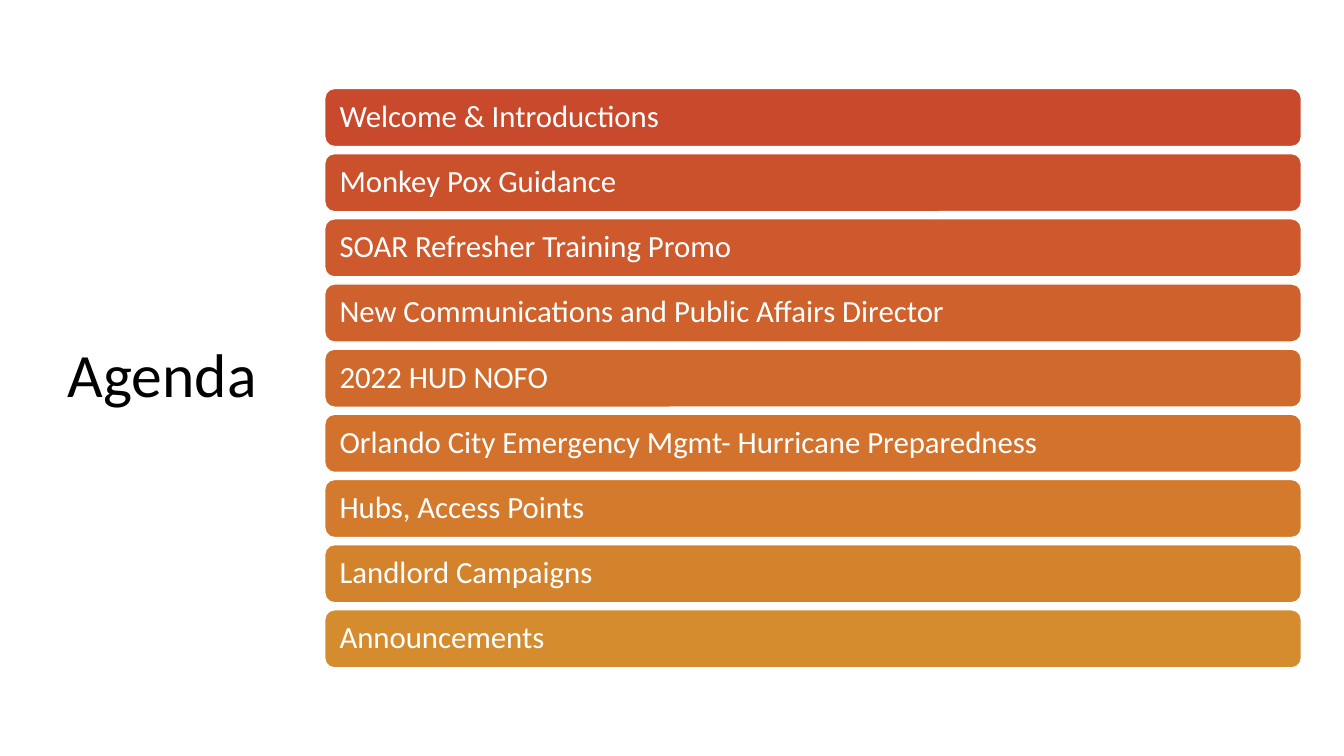
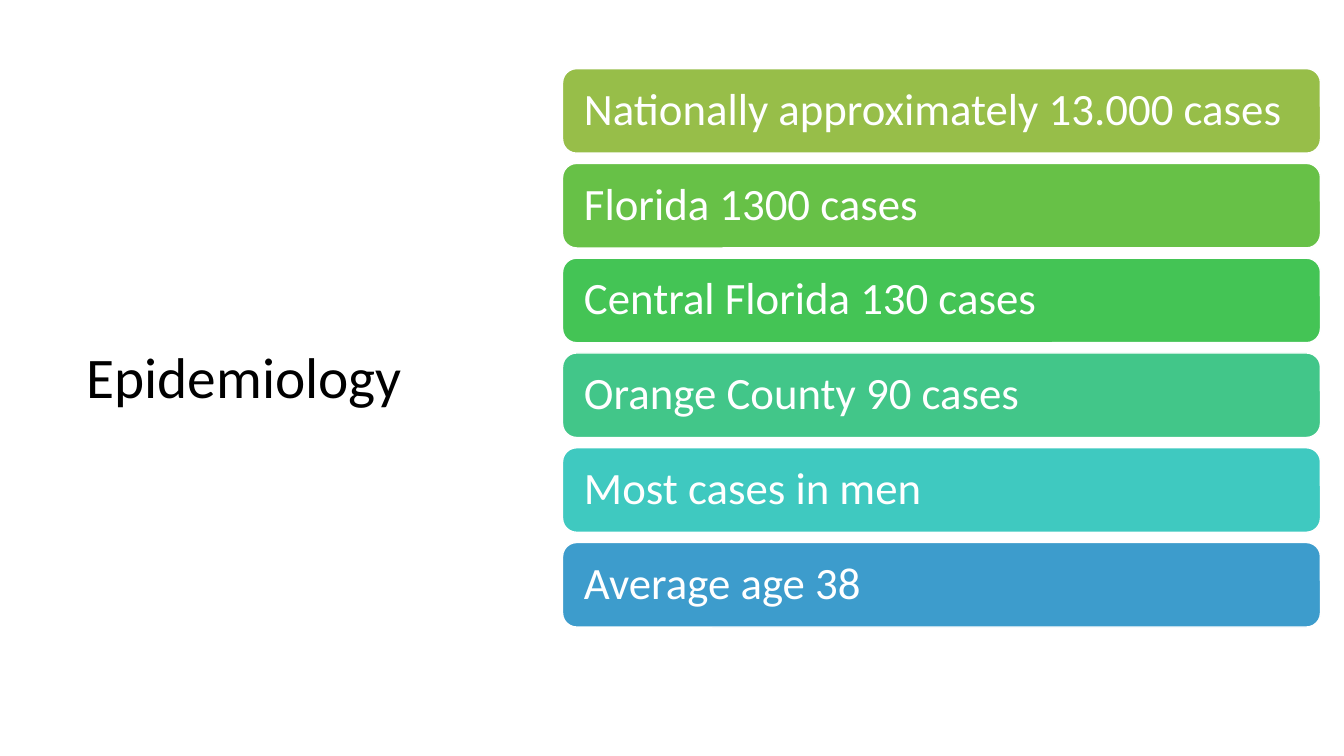
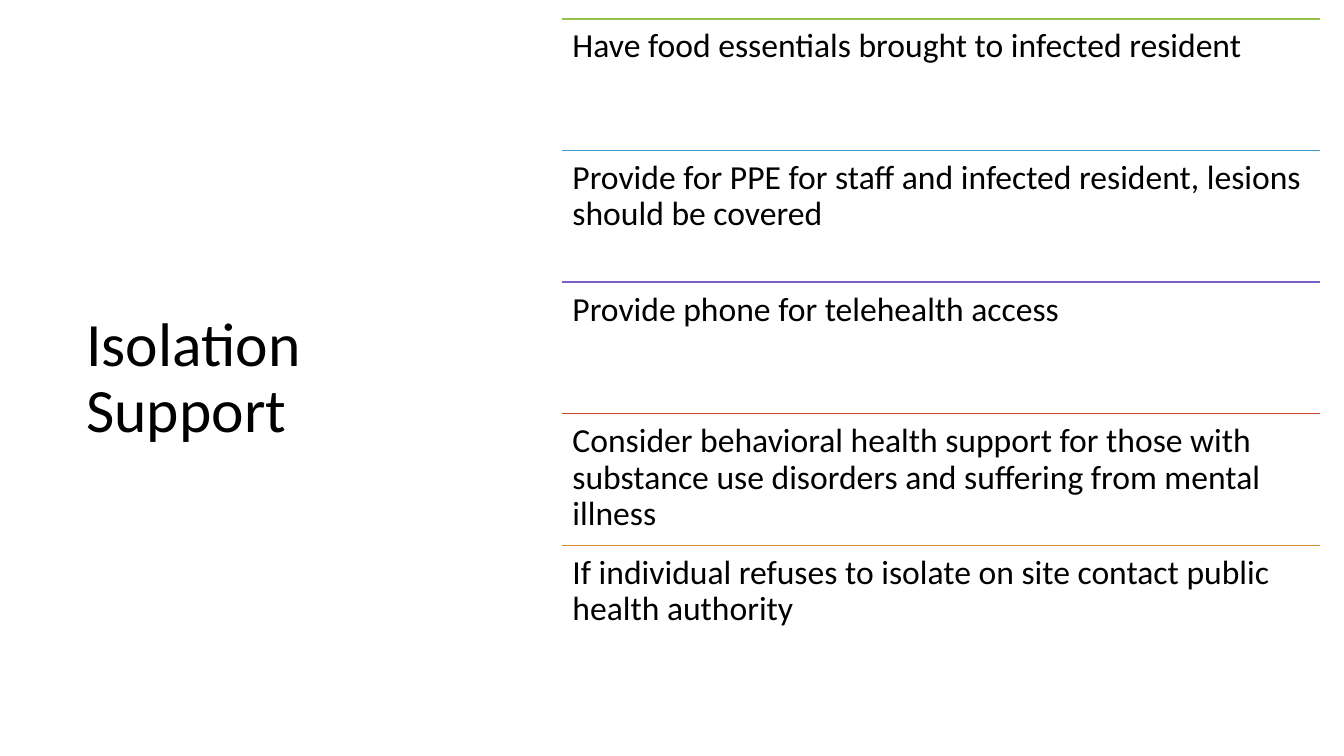
from lxml.etree import SubElement
from pptx import Presentation
from pptx.dml.color import RGBColor
from pptx.enum.shapes import MSO_CONNECTOR, MSO_SHAPE
from pptx.enum.text import MSO_ANCHOR, MSO_AUTO_SIZE, PP_ALIGN
from pptx.oxml.ns import qn
from pptx.util import Pt

# Shared style
FONT = "Calibri"
LINE_SPACING = 0.9
BLACK = RGBColor(0x00, 0x00, 0x00)
WHITE = RGBColor(0xFF, 0xFF, 0xFF)
RED = RGBColor(0xC9, 0x49, 0x2C)
GOLD = RGBColor(0xD5, 0x8C, 0x2E)
GREEN = RGBColor(0x97, 0xBE, 0x49)
BLUE = RGBColor(0x3D, 0x9C, 0xCC)
PURPLE = RGBColor(0x7C, 0x60, 0xC6)

# Steps between the accents
RED_TO_GOLD = [
    RED,
    RGBColor(0xCB, 0x51, 0x2C),
    RGBColor(0xCD, 0x59, 0x2C),
    RGBColor(0xCE, 0x61, 0x2C),
    RGBColor(0xD0, 0x69, 0x2C),
    RGBColor(0xD2, 0x72, 0x2C),
    RGBColor(0xD4, 0x7A, 0x2C),
    RGBColor(0xD4, 0x83, 0x2D),
    GOLD,
]
GREEN_TO_BLUE = [
    GREEN,
    RGBColor(0x67, 0xC1, 0x47),
    RGBColor(0x44, 0xC4, 0x55),
    RGBColor(0x42, 0xC6, 0x89),
    RGBColor(0x3F, 0xC9, 0xC0),
    BLUE,
]

# Content
AGENDA = [
    "Welcome & Introductions",
    "Monkey Pox Guidance",
    "SOAR Refresher Training Promo",
    "New Communications and Public Affairs Director",
    "2022 HUD NOFO",
    "Orlando City Emergency Mgmt- Hurricane Preparedness",
    "Hubs, Access Points",
    "Landlord Campaigns",
    "Announcements",
]
EPIDEMIOLOGY = [
    "Nationally approximately 13.000 cases",
    "Florida 1300 cases",
    "Central Florida 130 cases",
    "Orange County 90 cases",
    "Most cases in men",
    "Average age 38",
]
ISOLATION = [
    "Have food essentials brought to infected resident",
    "Provide for PPE for staff and infected resident, lesions should be covered",
    "Provide phone for telehealth access",
    "Consider behavioral health support for those with substance use disorders "
    "and suffering from mental illness",
    "If individual refuses to isolate on site contact public health authority",
]

# Places: left, top, width, height
AGENDA_TITLE = (0, 88.5, 232, 362)
SIDE_TITLE = (54.5, 57, 270, 428.5)
RIGHT_LEFT, RIGHT_WIDTH = 401.8, 541.4


def write_text(shape, text, *, size, color, align=PP_ALIGN.LEFT,
               anchor=MSO_ANCHOR.MIDDLE, inset=7.2):
    frame = shape.text_frame
    frame.word_wrap = True
    frame.auto_size = MSO_AUTO_SIZE.NONE
    frame.vertical_anchor = anchor
    frame.margin_left = frame.margin_right = Pt(inset)
    frame.margin_top = frame.margin_bottom = Pt(inset)
    para = frame.paragraphs[0]
    para.alignment = align
    para.line_spacing = LINE_SPACING
    span = para.add_run()
    span.text = text
    span.font.name = FONT
    span.font.size = Pt(size)
    span.font.color.rgb = color


def add_titled_page(deck, title, place, **text_format):
    page = deck.slides.add_slide(deck.slide_layouts[5])
    box = page.shapes.title
    box.left, box.top, box.width, box.height = map(Pt, place)
    write_text(box, title, color=BLACK, **text_format)
    return page


def add_bars(page, texts, colors, *, left, top, width, height, pitch, size, inset):
    """Stack rounded bars, one for each text."""
    for row, (text, color) in enumerate(zip(texts, colors)):
        bar = page.shapes.add_shape(
            MSO_SHAPE.ROUNDED_RECTANGLE,
            Pt(left), Pt(top + row * pitch), Pt(width), Pt(height))
        bar.shadow.inherit = False
        bar.fill.solid()
        bar.fill.fore_color.rgb = color
        bar.line.color.rgb = WHITE
        bar.line.width = Pt(1)
        write_text(bar, text, size=size, color=WHITE, inset=inset)


def add_rule(page, left, top, width, color):
    rule = page.shapes.add_connector(
        MSO_CONNECTOR.STRAIGHT, Pt(left), Pt(top), Pt(left + width), Pt(top))
    rule.line.color.rgb = color
    rule.line.width = Pt(1)
    SubElement(rule._element.spPr, qn("a:effectLst"))


def add_ruled_list(page, texts, colors, *, left, top, width, pitch, size):
    """Stack texts, each under its own coloured rule."""
    for row, (text, color) in enumerate(zip(texts, colors)):
        row_top = top + row * pitch
        add_rule(page, left, row_top, width, color)
        box = page.shapes.add_textbox(Pt(left), Pt(row_top), Pt(width), Pt(pitch))
        write_text(box, text, size=size, color=BLACK, anchor=MSO_ANCHOR.TOP)


def main():
    deck = Presentation()
    deck.slide_width, deck.slide_height = Pt(960), Pt(540)

    # Agenda
    page = add_titled_page(deck, "Agenda", AGENDA_TITLE, size=44,
                           align=PP_ALIGN.CENTER)
    add_bars(page, AGENDA, RED_TO_GOLD, left=232, top=63.2, width=697.6,
             height=41.5, pitch=46.55, size=22, inset=8.6)

    # Epidemiology
    page = add_titled_page(deck, "Epidemiology", SIDE_TITLE, size=41)
    add_bars(page, EPIDEMIOLOGY, GREEN_TO_BLUE, left=RIGHT_LEFT, top=49,
             width=RIGHT_WIDTH, height=60.4, pitch=67.7, size=32, inset=12.4)

    # Isolation support
    page = add_titled_page(deck, "Isolation Support", SIDE_TITLE, size=44)
    add_ruled_list(page, ISOLATION, [GREEN, BLUE, PURPLE, RED, GOLD],
                   left=RIGHT_LEFT, top=13.5, width=RIGHT_WIDTH, pitch=94, size=24)

    deck.save("out.pptx")


if __name__ == "__main__":
    main()
